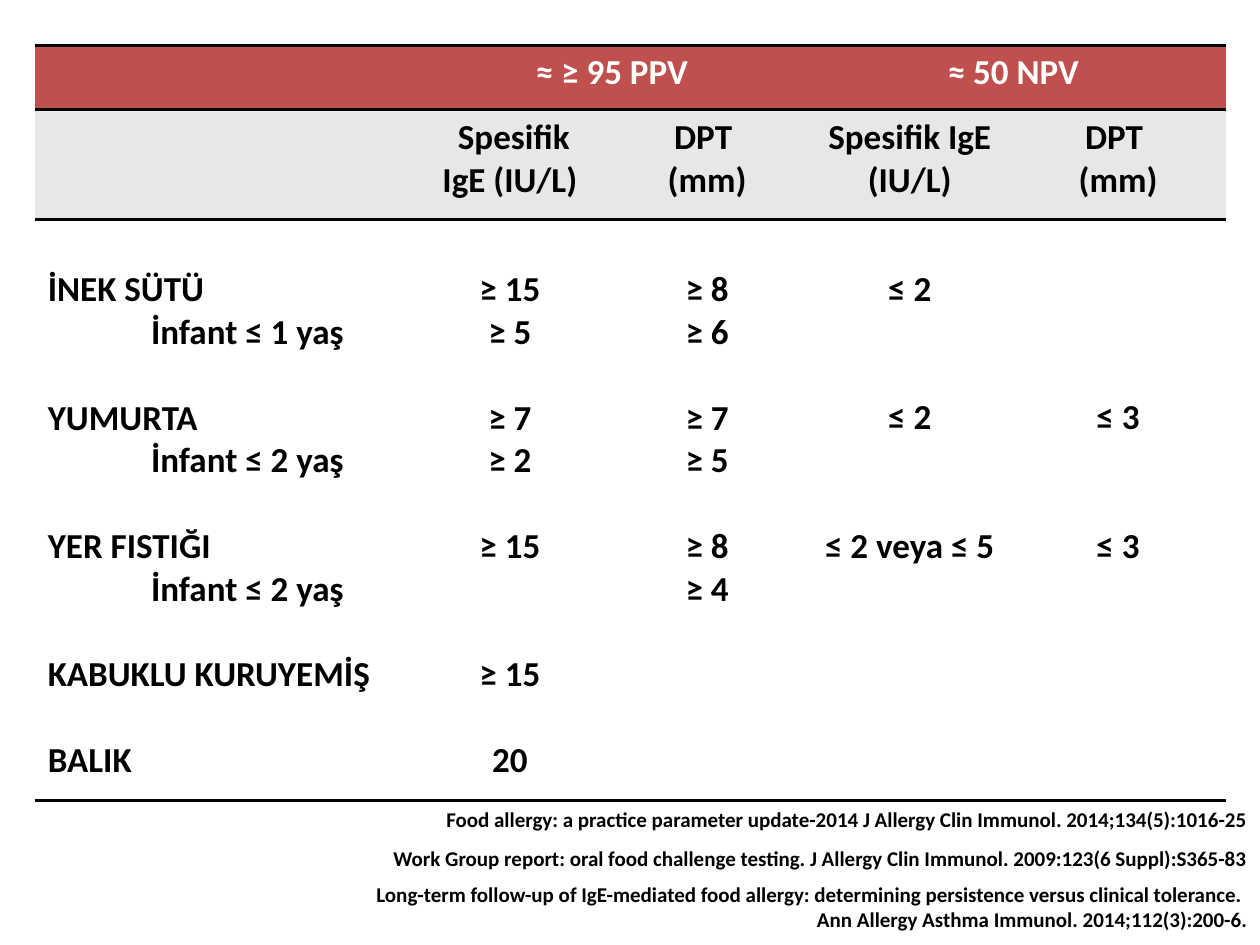
import pptx
import pptx.dml.color
import pptx.enum.text
import pptx.oxml.ns
import pptx.util
from lxml import etree
from pptx.util import Cm, Pt

FONT = "Calibri"
RED, GREY, WHITE, BLACK = "C0504D", "E7E7E7", "FFFFFF", "000000"
SLIDE_WIDTH, SLIDE_HEIGHT = 25.4, 19.05
TABLE_LEFT, TABLE_TOP = 0.71, 0.91
COLUMN_WIDTHS = (7.65, 3.84, 4.11, 4.06, 4.34)
ROW_HEIGHTS = (1.3, 2.21, 11.71)
ROW_FILLS = (RED, GREY, WHITE)
ROW_BORDERS = (("a:lnT", "a:lnB"), ("a:lnT",), ("a:lnB",))
LINE_HEIGHT = 24.4  # points, one line of 20 pt text
CELL_MARGIN = 3.6   # points
INFANT_INDENT = 2.08

GROUP_HEADINGS = {1: "≈ ≥ 95 PPV", 3: "≈ 50 NPV "}
COLUMN_HEADINGS = (
    (),
    (" Spesifik IgE (IU/L)",),
    ("DPT ", "(mm)"),
    ("Spesifik IgE (IU/L)",),
    ("DPT ", "(mm)"),
)
# One list per food; every food is preceded by one empty line.
FOODS = [
    [("İNEK SÜTÜ", "≥ 15", "≥ 8", "≤ 2", ""),
     ("İnfant ≤ 1 yaş", "≥ 5", "≥ 6", "", "")],
    [("YUMURTA", "≥ 7", "≥ 7", "≤ 2", "≤ 3"),
     ("İnfant ≤ 2 yaş", "≥ 2", "≥ 5", "", "")],
    [("YER FISTIĞI", "≥ 15", "≥ 8", "≤ 2 veya ≤ 5", "≤ 3"),
     ("İnfant ≤ 2 yaş", "", "≥ 4", "", "")],
    [("KABUKLU KURUYEMİŞ", "≥ 15", "", "", "")],
    [("BALIK", "20", "", "", "")],
]
# left, top, height, lines
REFERENCES = [
    (2.21, 16.13, 0.76, (
        "Food allergy: a practice parameter update-2014 J Allergy Clin Immunol. 2014;134(5):1016-25",)),
    (5.84, 16.92, 0.76, (
        "Work Group report: oral food challenge testing. J Allergy Clin Immunol. "
        "2009:123(6 Suppl):S365-83",)),
    (0, 17.65, 1.26, (
        "Long-term follow-up of IgE-mediated food allergy: determining persistence "
        "versus clinical tolerance. ",
        "Ann Allergy Asthma Immunol. 2014;112(3):200-6.")),
]
ALIGN = pptx.enum.text.PP_ALIGN
NO_STYLE = "{2D5ABB26-0587-4C30-8999-92F81FD0307C}"
qualified = pptx.oxml.ns.qn


def color(value):
    return pptx.dml.color.RGBColor.from_string(value)


def add_lines(frame, lines, size, alignment, text_color=BLACK):
    """Write each line as a paragraph and return the paragraphs."""
    paragraphs = []
    for number, line in enumerate(lines):
        paragraph = frame.add_paragraph() if number else frame.paragraphs[0]
        paragraph.alignment = alignment
        run = paragraph.add_run()
        run.text = line
        run.font.name = FONT
        run.font.size = Pt(size)
        run.font.bold = True
        run.font.color.rgb = color(text_color)
        paragraphs.append(paragraph)
    return paragraphs


def add_border(cell, side):
    properties = cell._tc.get_or_add_tcPr()
    line = etree.SubElement(properties, qualified(side), w=str(Pt(2)))
    fill = etree.SubElement(line, qualified("a:solidFill"))
    etree.SubElement(fill, qualified("a:srgbClr"), val=BLACK)


def fill_food_column(cell, column, entries):
    """Place entries (line number, is infant, text), with spacing for the gaps."""
    cell.margin_top = Pt(CELL_MARGIN + LINE_HEIGHT * entries[0][0])
    alignment = ALIGN.CENTER if column else ALIGN.LEFT
    paragraphs = add_lines(cell.text_frame, [text for _, _, text in entries], 20, alignment)
    previous = entries[0][0] - 1
    for paragraph, (line, infant, _) in zip(paragraphs, entries):
        if line - previous > 1:
            paragraph.space_before = Pt(LINE_HEIGHT * (line - previous - 1))
        if infant and column == 0:
            paragraph._p.get_or_add_pPr().set("marL", str(Cm(INFANT_INDENT)))
        previous = line


def add_food_table(slide):
    frame = slide.shapes.add_table(
        len(ROW_HEIGHTS), len(COLUMN_WIDTHS), Cm(TABLE_LEFT), Cm(TABLE_TOP),
        Cm(sum(COLUMN_WIDTHS)), Cm(sum(ROW_HEIGHTS)))
    table = frame.table
    table.first_row = table.horz_banding = False
    table._tbl.tblPr.find(qualified("a:tableStyleId")).text = NO_STYLE
    for column, width in zip(table.columns, COLUMN_WIDTHS):
        column.width = Cm(width)
    for row, height, fill, sides in zip(table.rows, ROW_HEIGHTS, ROW_FILLS, ROW_BORDERS):
        row.height = Cm(height)
        for cell in row.cells:
            for side in sides:
                add_border(cell, side)
            cell.fill.solid()
            cell.fill.fore_color.rgb = color(fill)

    for column, heading in GROUP_HEADINGS.items():
        cell = table.cell(0, column)
        cell.merge(table.cell(0, column + 1))
        add_lines(cell.text_frame, [heading], 20, ALIGN.CENTER, WHITE)

    food_lines = []
    line = 0
    for food in FOODS:
        line += 1
        for position, values in enumerate(food):
            food_lines.append((line, position > 0, values))
            line += 1

    for column, heading in enumerate(COLUMN_HEADINGS):
        add_lines(table.cell(1, column).text_frame, heading, 20, ALIGN.CENTER)
        entries = [(number, infant, values[column])
                   for number, infant, values in food_lines if values[column]]
        fill_food_column(table.cell(2, column), column, entries)


def add_reference(slide, left, top, height, lines):
    box = slide.shapes.add_textbox(Cm(left), Cm(top), Cm(SLIDE_WIDTH - left), Cm(height))
    box.text_frame.word_wrap = True
    add_lines(box.text_frame, lines, 12, ALIGN.RIGHT)


def main():
    presentation = pptx.Presentation()
    presentation.slide_width = Cm(SLIDE_WIDTH)
    presentation.slide_height = Cm(SLIDE_HEIGHT)
    slide = presentation.slides.add_slide(presentation.slide_layouts[6])
    add_food_table(slide)
    for reference in REFERENCES:
        add_reference(slide, *reference)
    presentation.save("out.pptx")


if __name__ == "__main__":
    main()
